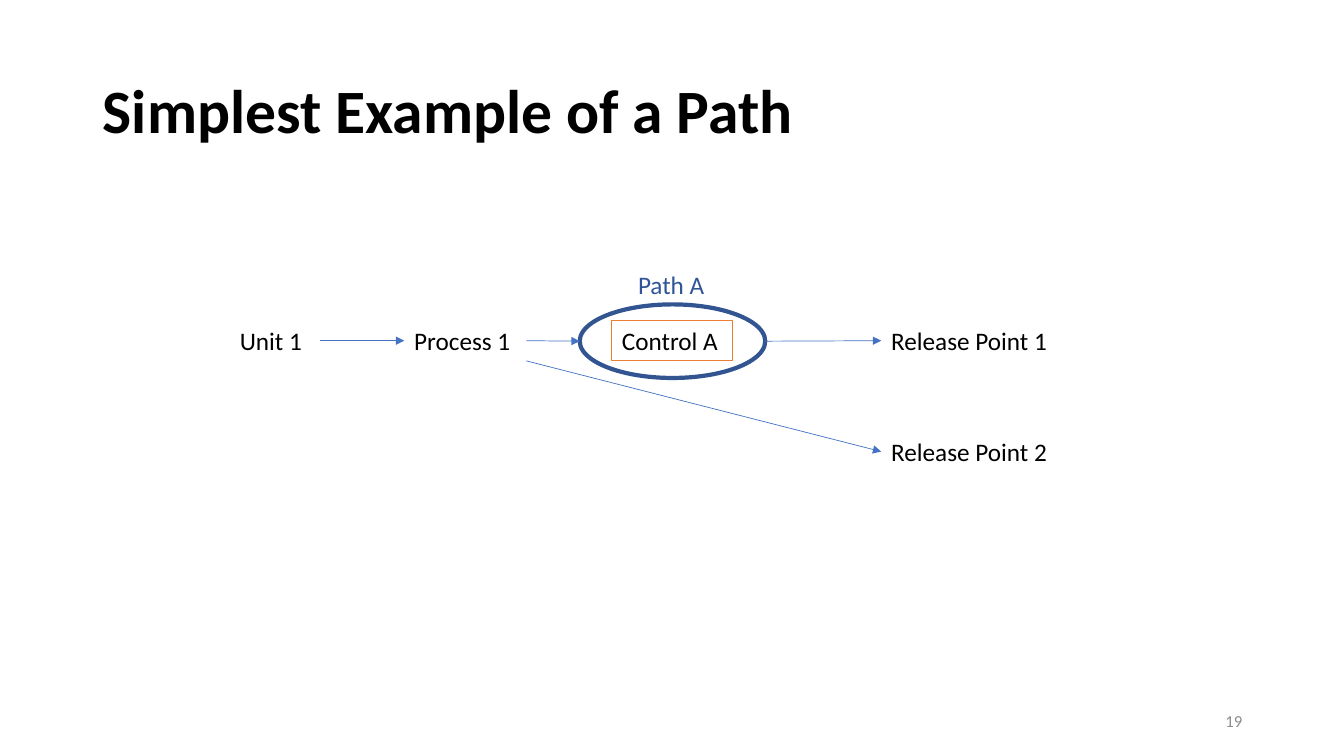
from dataclasses import dataclass

from lxml.etree import SubElement
from pptx import Presentation
from pptx.dml.color import RGBColor as RGB
from pptx.enum.shapes import MSO_CONNECTOR as Connector, MSO_SHAPE as Shape
from pptx.enum.text import MSO_ANCHOR as Anchor, PP_ALIGN as Align
from pptx.oxml.ns import qn
from pptx.util import Inches, Pt


@dataclass(frozen=True)
class Theme:
    font: str = "Calibri"
    title_size: float = 44
    label_size: float = 18
    number_size: float = 12
    arrow_width: float = 0.5
    control_width: float = 0.75
    path_width: float = 3
    text: RGB = RGB(0, 0, 0)
    muted: RGB = RGB(0x8C, 0x8C, 0x8C)
    arrow: RGB = RGB(0x44, 0x72, 0xC4)
    control: RGB = RGB(0xED, 0x7D, 0x31)
    path_ring: RGB = RGB(0x32, 0x54, 0x91)
    path_label: RGB = RGB(0x2F, 0x55, 0x97)


@dataclass(frozen=True)
class Box:
    left: float
    top: float
    width: float
    height: float

    def inside(self, left, top, width, height):
        """Return a box whose corner is given relative to this one."""
        return Box(self.left + left, self.top + top, width, height)

    def emu(self):
        return [Inches(v) for v in (self.left, self.top, self.width, self.height)]


THEME = Theme()
SLIDE_W, SLIDE_H = 13.33, 7.5
LABEL_H = 0.4


def write(frame, text, size, color, bold=False, align=Align.LEFT, anchor=Anchor.TOP):
    frame.text = text
    frame.word_wrap = True
    frame.vertical_anchor = anchor
    line = frame.paragraphs[0]
    line.alignment = align
    font = line.runs[0].font
    font.name, font.size, font.bold = THEME.font, Pt(size), bold
    font.color.rgb = color


def add_label(slide, box, text, color=THEME.text):
    label = slide.shapes.add_textbox(*box.emu())
    write(label.text_frame, text, THEME.label_size, color)


def add_outline(slide, kind, box, color, width):
    outline = slide.shapes.add_shape(kind, *box.emu())
    outline.shadow.inherit = False
    outline.fill.background()
    outline.line.color.rgb = color
    outline.line.width = Pt(width)
    return outline


def add_arrow(slide, start, end):
    arrow = slide.shapes.add_connector(
        Connector.STRAIGHT, *(Inches(v) for v in (*start, *end)))
    arrow.line.color.rgb = THEME.arrow
    arrow.line.width = Pt(THEME.arrow_width)
    SubElement(arrow.line._get_or_add_ln(), qn("a:tailEnd"), type="triangle")
    SubElement(arrow._element.spPr, qn("a:effectLst"))


def add_title(slide, box, text):
    title = slide.shapes.title
    title.left, title.top, title.width, title.height = box.emu()
    write(title.text_frame, text, THEME.title_size, THEME.text,
          bold=True, anchor=Anchor.MIDDLE)
    title.text_frame.paragraphs[0].line_spacing = 0.9


def add_slide_number(slide, box, number):
    holder = slide.shapes.add_textbox(*box.emu())
    write(holder.text_frame, number, THEME.number_size, THEME.muted,
          align=Align.RIGHT, anchor=Anchor.MIDDLE)


def add_path_diagram(slide, box):
    """Draw the flow from unit to release points, with Path A circled."""
    row_1, row_2 = 0.56, 1.66
    unit = box.inside(0, row_1, 0.89, LABEL_H)
    process = box.inside(1.73, row_1, 1.21, LABEL_H)
    control = box.inside(3.79, row_1, 1.2, LABEL_H)
    ring = box.inside(3.47, 0.4, 1.84, 0.73)
    releases = [box.inside(6.46, row, 2.48, LABEL_H) for row in (row_1, row_2)]

    def left_of(part):
        return part.left, part.top + part.height / 2

    def right_of(part):
        return part.left + part.width, part.top + part.height / 2

    add_label(slide, unit, "Unit 1")
    add_label(slide, process, "Process 1")
    control_box = add_outline(slide, Shape.RECTANGLE, control,
                              THEME.control, THEME.control_width)
    write(control_box.text_frame, "Control A", THEME.label_size, THEME.text)
    add_outline(slide, Shape.OVAL, ring, THEME.path_ring, THEME.path_width)
    add_label(slide, box.inside(3.95, 0, 0.86, LABEL_H), "Path A", THEME.path_label)
    for number, release in enumerate(releases, 1):
        add_label(slide, release, f"Release Point {number}")

    for source, target in ((unit, process), (process, ring), (ring, releases[0])):
        add_arrow(slide, right_of(source), left_of(target))
    bypass_start = process.left + process.width, process.top + process.height
    add_arrow(slide, bypass_start, left_of(releases[1]))


def main():
    deck = Presentation()
    deck.slide_width, deck.slide_height = Inches(SLIDE_W), Inches(SLIDE_H)
    slide = deck.slides.add_slide(deck.slide_layouts[5])
    add_title(slide, Box(0.92, 0.4, 11.5, 1.45), "Simplest Example of a Path")
    add_path_diagram(slide, Box(2.28, 2.62, 8.94, 2.06))
    add_slide_number(slide, Box(9.42, 6.95, 3, LABEL_H), "19")
    deck.save("out.pptx")


if __name__ == "__main__":
    main()
